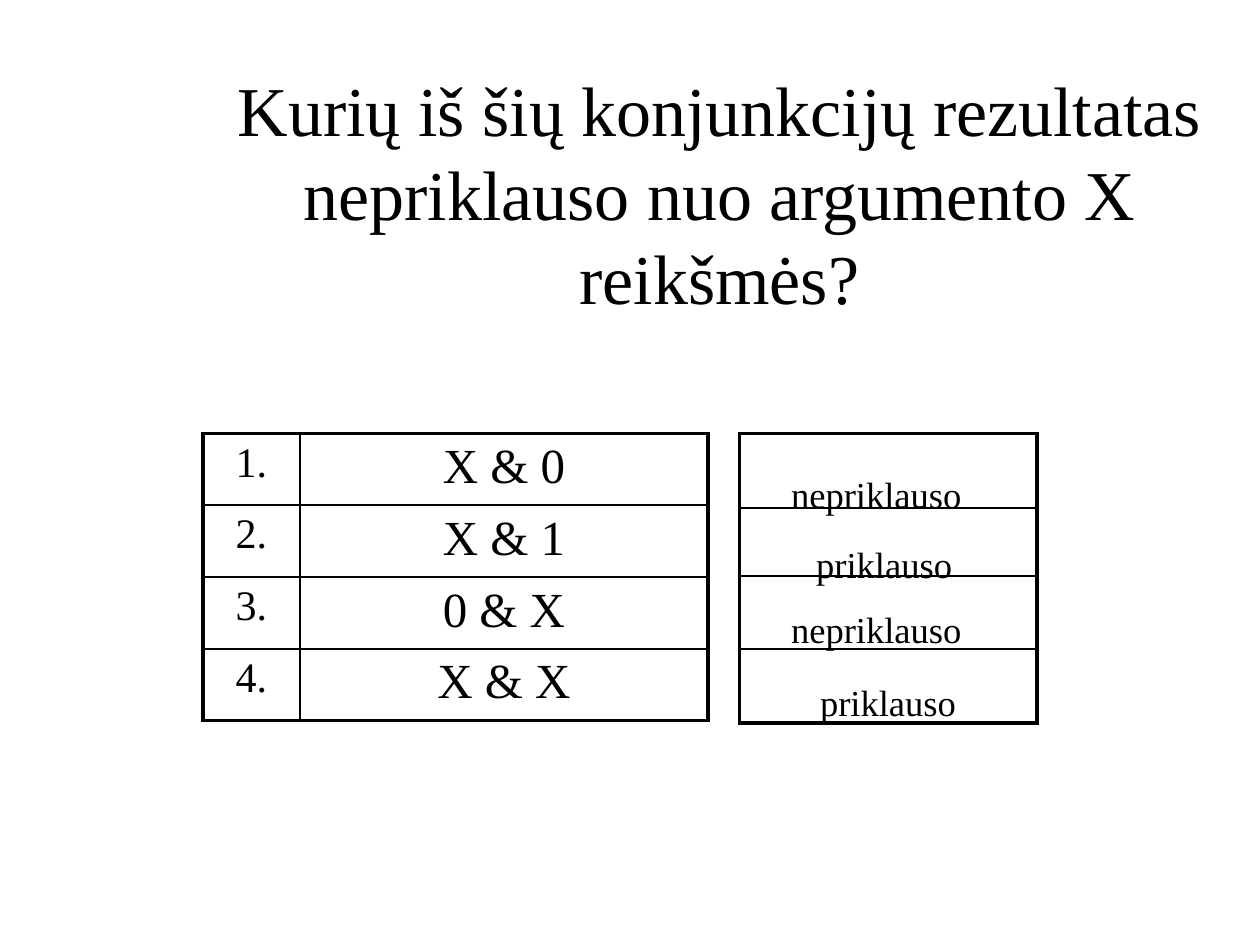
from lxml.etree import SubElement
from pptx import Presentation
from pptx.dml.color import RGBColor
from pptx.enum.text import MSO_ANCHOR, MSO_AUTO_SIZE, PP_ALIGN
from pptx.oxml.ns import qn
from pptx.util import Inches, Pt

TITLE = "Kurių iš šių konjunkcijų rezultatas nepriklauso nuo argumento X reikšmės?"
CONJUNCTIONS = [("1.", "X & 0"), ("2.", "X & 1"), ("3.", "0 & X"), ("4.", "X & X")]
ANSWERS = [
    ("nepriklauso", 6.18, 3.36, 1.89),
    ("priklauso", 6.38, 3.92, 1.5),
    ("nepriklauso", 6.18, 4.43, 1.89),
    ("priklauso", 6.41, 5.01, 1.58),
]
COLORS = {"ink": "000000"}
FONT = "Times New Roman"
TABLE_TOP = 3.44
THICK, THIN = 2.25, 1


def add_span(para, text, size):
    span = para.add_run()
    span.text = text
    span.font.size = Pt(size)
    span.font.name = FONT
    span.font.color.rgb = RGBColor.from_string(COLORS["ink"])
    return span


def set_borders(cell, widths):
    properties = cell._tc.get_or_add_tcPr()
    for position, (side, width) in enumerate(zip("LRTB", widths)):
        line = properties.makeelement(qn(f"a:ln{side}"), {"w": str(Pt(width))})
        fill = SubElement(line, qn("a:solidFill"))
        SubElement(fill, qn("a:srgbClr"), val=COLORS["ink"])
        properties.insert(position, line)


def add_grid(page, left, widths, heights):
    frame = page.shapes.add_table(
        len(heights), len(widths), Inches(left), Inches(TABLE_TOP),
        Inches(sum(widths)), Inches(sum(heights)))
    table = frame.table
    table.first_row = table.horz_banding = False
    for column, width in zip(table.columns, widths):
        column.width = Inches(width)
    last_row, last_column = len(heights) - 1, len(widths) - 1
    for r, height in enumerate(heights):
        table.rows[r].height = Inches(height)
        for c in range(len(widths)):
            cell = table.cell(r, c)
            cell.fill.background()
            outer = (c == 0, c == last_column, r == 0, r == last_row)
            set_borders(cell, [THICK if edge else THIN for edge in outer])
    return table


def main():
    deck = Presentation()
    deck.slide_width, deck.slide_height = Inches(10), Inches(7.5)
    page = deck.slides.add_slide(deck.slide_layouts[5])

    title = page.shapes.title
    title.left, title.top = Inches(1.42), Inches(0.67)
    title.width, title.height = Inches(8.58), Inches(2.38)
    title.text_frame.vertical_anchor = MSO_ANCHOR.MIDDLE
    title.text_frame.auto_size = MSO_AUTO_SIZE.NONE
    para = title.text_frame.paragraphs[0]
    para.alignment = PP_ALIGN.CENTER
    para.font.size = Pt(40)
    add_span(para, TITLE, 40)
    para.add_line_break()

    table = add_grid(page, 1.61, [0.77, 3.24], [0.57] * len(CONJUNCTIONS))
    for r, texts in enumerate(CONJUNCTIONS):
        for c, (text, size) in enumerate(zip(texts, (24, 28))):
            para = table.cell(r, c).text_frame.paragraphs[0]
            para.alignment = PP_ALIGN.CENTER
            add_span(para, text, size)

    add_grid(page, 5.87, [2.36], [0.59, 0.54, 0.58, 0.59])
    for text, left, top, width in ANSWERS:
        box = page.shapes.add_textbox(
            Inches(left), Inches(top), Inches(width), Inches(0.51))
        box.text_frame.word_wrap = True
        box.text_frame.auto_size = MSO_AUTO_SIZE.SHAPE_TO_FIT_TEXT
        span = add_span(box.text_frame.paragraphs[0], text, 36)
        span.font._element.set("baseline", "-25000")

    deck.save("out.pptx")


if __name__ == "__main__":
    main()
